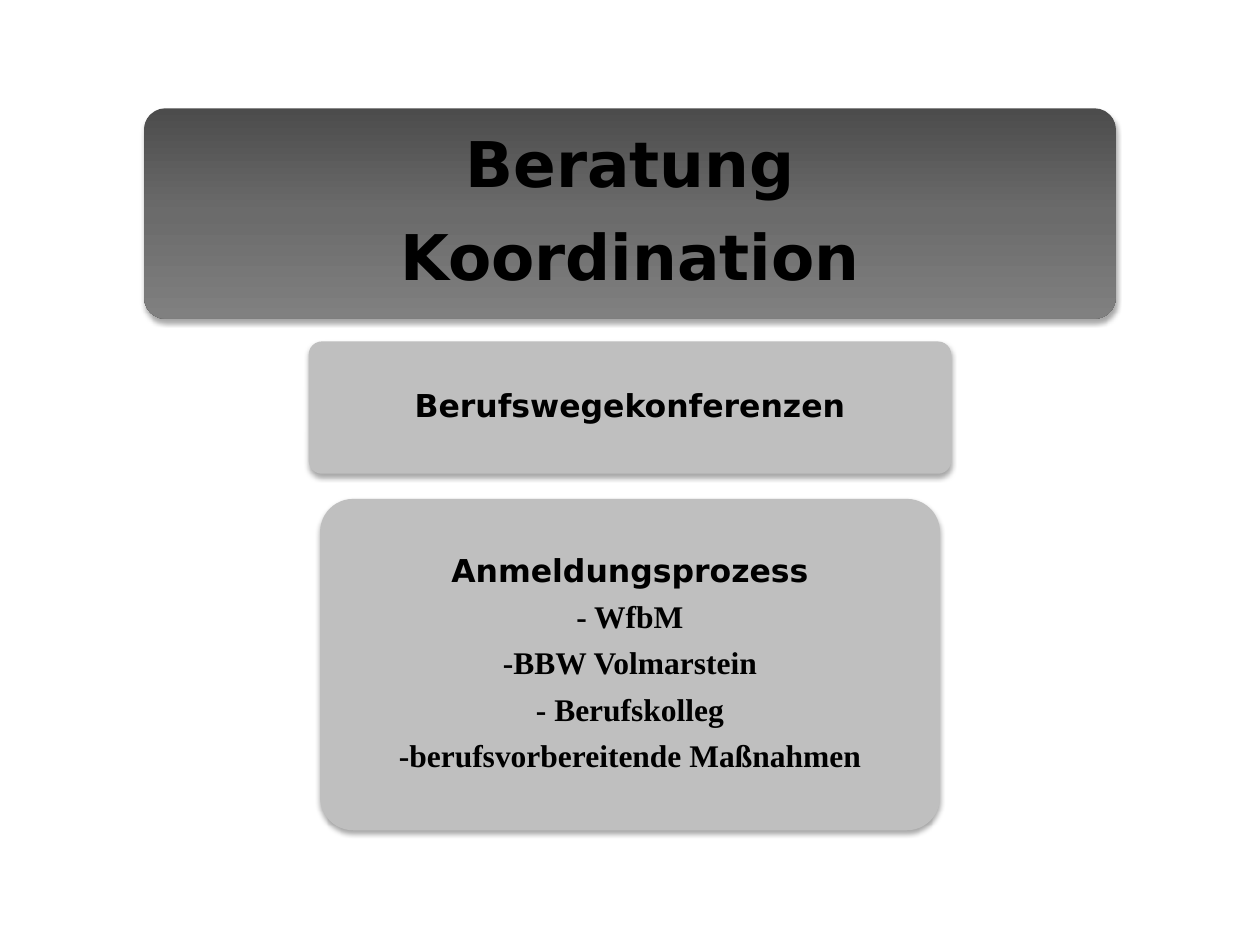
import copy

import lxml.etree
import pptx
import pptx.dml.color
import pptx.enum.shapes
import pptx.enum.text
import pptx.oxml
import pptx.oxml.ns
import pptx.util

BLACK = pptx.dml.color.RGBColor(0x00, 0x00, 0x00)
GRAY = pptx.dml.color.RGBColor(0xBF, 0xBF, 0xBF)
DARK = pptx.dml.color.RGBColor(0x4C, 0x4C, 0x4C)
MIDDLE = pptx.dml.color.RGBColor(0x6B, 0x6B, 0x6B)
LIGHT = pptx.dml.color.RGBColor(0x80, 0x80, 0x80)
SANS = "DejaVu Sans"
SERIF = "Times New Roman"
SHADOW = (
    '<a:outerShdw %s blurRad="39400" dist="22900" dir="5400000" rotWithShape="0">'
    '<a:srgbClr val="000000"><a:alpha val="35000"/></a:srgbClr></a:outerShdw>'
    % pptx.oxml.ns.nsdecls("a")
)

prs = pptx.Presentation()
prs.slide_width = pptx.util.Inches(10)
prs.slide_height = pptx.util.Inches(7.5)
s = prs.slides.add_slide(prs.slide_layouts[5])


def add_panel(top, width, height):
    sp = s.shapes.add_shape(
        pptx.enum.shapes.MSO_SHAPE.ROUNDED_RECTANGLE,
        (prs.slide_width - pptx.util.Inches(width)) // 2,
        pptx.util.Inches(top),
        pptx.util.Inches(width),
        pptx.util.Inches(height),
    )
    sp.adjustments[0] = 0.1
    sp.fill.solid()
    sp.fill.fore_color.rgb = GRAY
    sp.line.fill.background()
    sp.shadow.inherit = False
    effects = sp._element.spPr.find(pptx.oxml.ns.qn("a:effectLst"))
    effects.append(pptx.oxml.parse_xml(SHADOW))
    return sp


def write_lines(sp, size, margin, lines):
    tf = sp.text_frame
    tf.word_wrap = True
    tf.auto_size = pptx.enum.text.MSO_AUTO_SIZE.NONE
    tf.vertical_anchor = pptx.enum.text.MSO_ANCHOR.MIDDLE
    tf.margin_left = tf.margin_right = pptx.util.Inches(margin)
    tf.margin_top = tf.margin_bottom = pptx.util.Inches(margin)
    for i, (text, font) in enumerate(lines):
        p = tf.add_paragraph() if i else tf.paragraphs[0]
        p.alignment = pptx.enum.text.PP_ALIGN.CENTER
        p.line_spacing = 0.9
        p.space_before = pptx.util.Pt(0)
        p.space_after = pptx.util.Pt(round(size * 0.39))
        r = p.add_run()
        r.text = text
        r.font.name = font
        r.font.size = pptx.util.Pt(size)
        r.font.bold = True
        r.font.color.rgb = BLACK


banner = add_panel(0.86, 7.71, 1.67)
banner.fill.gradient()
banner.fill.gradient_angle = 270
first = banner._element.spPr.find(".//" + pptx.oxml.ns.qn("a:gs"))
first.addnext(copy.deepcopy(first))
for stop, position, color in zip(
    banner.fill.gradient_stops, (0, 0.5, 1), (DARK, MIDDLE, LIGHT)
):
    stop.position = position
    stop.color.rgb = color

title = s.shapes.title
title.left, title.top = banner.left, banner.top
title.width, title.height = banner.width, banner.height
s.shapes._spTree.append(title._element)
write_lines(title, 36, 0.2, [("Beratung", SANS), ("Koordination", SANS)])

panels = [
    (2.71, 5.1, 1.05, [("Berufswegekonferenzen", SANS)]),
    (3.96, 4.92, 2.63, [
        ("Anmeldungsprozess", SANS),
        ("- WfbM", SERIF),
        ("-BBW Volmarstein", SERIF),
        ("- Berufskolleg", SERIF),
        ("-berufsvorbereitende Maßnahmen", SERIF),
    ]),
]
for top, width, height, lines in panels:
    write_lines(add_panel(top, width, height), 18, 0.07, lines)

prs.save("out.pptx")
